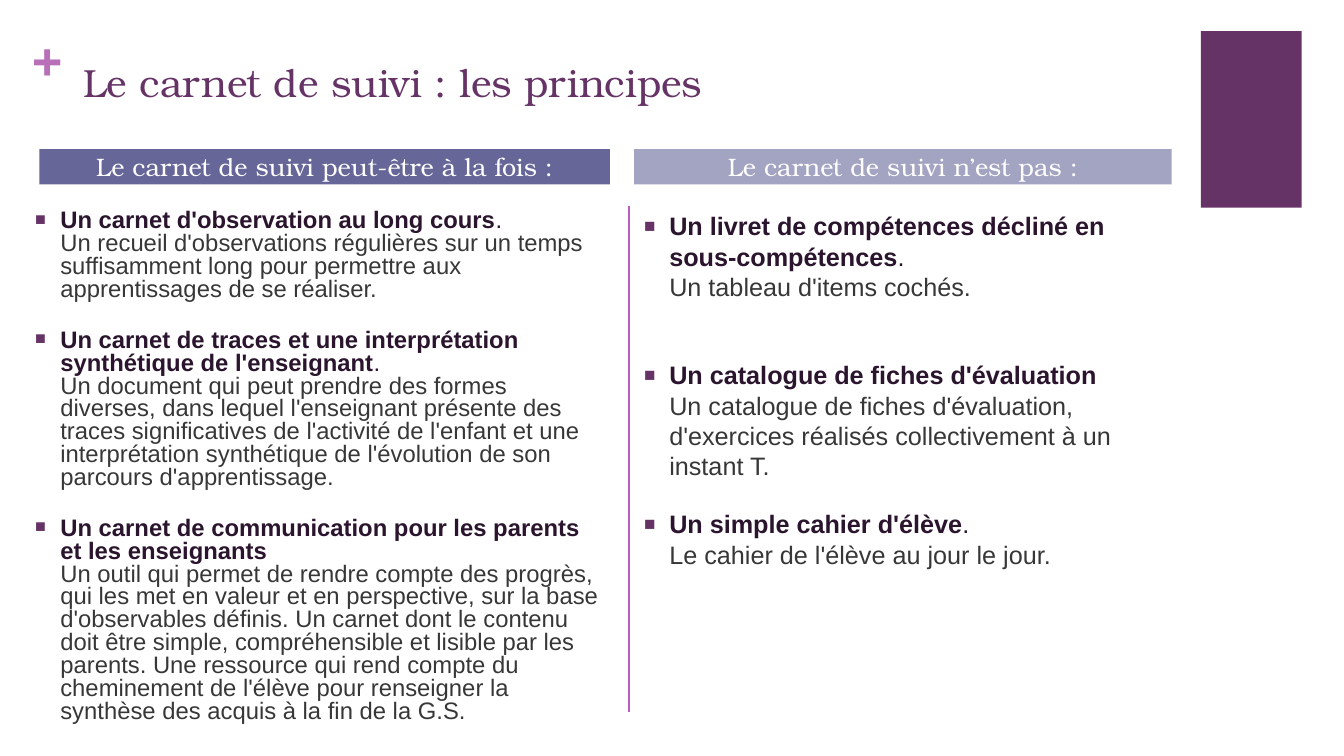
from pptx import Presentation
from pptx.dml.color import RGBColor
from pptx.enum.shapes import MSO_CONNECTOR, MSO_SHAPE
from pptx.enum.text import MSO_ANCHOR, PP_ALIGN
from pptx.oxml.ns import qn
from pptx.util import Inches, Pt
from lxml import etree

RECT, STRAIGHT = MSO_SHAPE.RECTANGLE, MSO_CONNECTOR.STRAIGHT
TOP, MIDDLE = MSO_ANCHOR.TOP, MSO_ANCHOR.MIDDLE
LEFT, CENTER = PP_ALIGN.LEFT, PP_ALIGN.CENTER

# Content
SERIF, SANS = "TeX Gyre Bonum", "Arial"
PURPLE, LILAC, RULE = "663366", "B870B8", "BC5FBC"
DARK, GREY, WHITE = "2B142D", "373737", "FFFFFF"
TITLE = "Le carnet de suivi : les principes"

# Each item: bold heading, mark after it, lines of explanation
IS_ITEMS = [
    ("Un carnet d'observation au long cours", ".",
     ["Un recueil d'observations régulières sur un temps suffisamment long "
      "pour permettre aux apprentissages de se réaliser."]),
    ("Un carnet de traces et une interprétation synthétique de l'enseignant", ".",
     ["Un document qui peut prendre des formes diverses, dans lequel "
      "l'enseignant présente des traces significatives de l'activité de "
      "l'enfant et une interprétation synthétique de l'évolution de son "
      "parcours d'apprentissage."]),
    ("Un carnet de communication pour les parents et les enseignants", "",
     ["Un outil qui permet de rendre compte des progrès, qui les met en valeur "
      "et en perspective, sur la base d'observables définis. Un carnet dont le "
      "contenu doit être simple, compréhensible et lisible par les parents. "
      "Une ressource qui rend compte du cheminement de l'élève pour renseigner "
      "la synthèse des acquis à la fin de la G.S."]),
]
IS_NOT_ITEMS = [
    ("Un livret de compétences décliné en sous-compétences", ".",
     ["Un tableau d'items cochés."]),
    ("Un catalogue de fiches d'évaluation", "",
     ["Un catalogue de fiches d'évaluation, d'exercices réalisés "
      "collectivement à un instant T."]),
    ("Un simple cahier d'élève", ".",
     ["Le cahier de l'élève au jour le jour."]),
]
# Header, fill, header (left, width), body (left, width, height),
# size, line spacing, space before each item, items
COLUMNS = [
    ("Le carnet de suivi peut-être à la fois :", "666699", (0.39, 5.66),
     (0.25, 5.81, 5.32), 17, 0.8, (20, 20, 20), IS_ITEMS),
    ("Le carnet de suivi n’est pas :", "A3A3C2", (6.29, 5.33),
     (6.29, 5.33, 5.02), 18, 1.0, (20, 41.7, 20), IS_NOT_ITEMS),
]
HEADER_TOP, HEADER_H, BODY_TOP, RULE_X, RULE_END = 1.48, 0.35, 2.04, 6.24, 7.06


def rgb(value):
    return RGBColor.from_string(value)


def add_rect(left, top, width, height, fill):
    sp = s.shapes.add_shape(RECT, *map(Inches, (left, top, width, height)))
    sp.shadow.inherit = False
    sp.fill.solid()
    sp.fill.fore_color.rgb = rgb(fill)
    sp.line.fill.background()
    return sp


def add_box(left, top, width, height):
    return s.shapes.add_textbox(*map(Inches, (left, top, width, height)))


def set_frame(sp, inset_x=0.1, inset_y=0.05, anchor=TOP):
    tf = sp.text_frame
    tf.word_wrap = True
    tf.vertical_anchor = anchor
    tf.margin_left = tf.margin_right = Inches(inset_x)
    tf.margin_top = tf.margin_bottom = Inches(inset_y)
    return tf


def set_font(p, name, size, color=None, bold=None):
    p.font.name, p.font.size, p.font.bold = name, Pt(size), bold
    if color:
        p.font.color.rgb = rgb(color)


def write_line(tf, text, size, color, bold=None, align=LEFT):
    p = tf.paragraphs[0]
    p.text, p.alignment = text, align
    set_font(p, SERIF, size, color, bold)


def add_run(p, text, color, bold=False):
    r = p.add_run()
    r.text, r.font.bold = text, bold
    r.font.color.rgb = rgb(color)


def set_bullet(p):
    pPr = p._p.get_or_add_pPr()
    pPr.set("marL", str(Inches(0.25)))
    pPr.set("indent", str(-Inches(0.25)))
    bullet = [etree.Element(qn(tag)) for tag in
              ("a:buClr", "a:buSzPct", "a:buFont", "a:buChar")]
    etree.SubElement(bullet[0], qn("a:srgbClr")).set("val", PURPLE)
    bullet[1].set("val", "75000")
    bullet[2].set("typeface", SANS)
    bullet[3].set("char", "■")
    defaults = pPr.find(qn("a:defRPr"))
    for element in bullet:
        defaults.addprevious(element)


prs = Presentation()
prs.slide_width, prs.slide_height = Inches(13.33), Inches(7.5)
s = prs.slides.add_slide(prs.slide_layouts[6])

# Corner block, plus sign and title
add_rect(11.91, 0.31, 1, 1.75, PURPLE)
write_line(set_frame(add_box(0.32, 0.25, 0.38, 0.61), 0, 0), "+", 36, LILAC, True)
write_line(set_frame(add_box(0.73, 0.53, 11.02, 1.22)), TITLE, 28, PURPLE)

# Two columns: header band and bulleted items
for header, fill, (x, w), (bx, bw, bh), size, spacing, gaps, items in COLUMNS:
    band = add_rect(x, HEADER_TOP, w, HEADER_H, fill)
    write_line(set_frame(band, 0.1, 0, MIDDLE), header, 18, WHITE, align=CENTER)
    tf = set_frame(add_box(bx, BODY_TOP, bw, bh))
    for i, (heading, mark, lines) in enumerate(items):
        p = tf.add_paragraph() if i else tf.paragraphs[0]
        p.line_spacing, p.space_before = spacing, Pt(gaps[i])
        set_font(p, SANS, size)
        set_bullet(p)
        add_run(p, heading, DARK, True)
        if mark:
            add_run(p, mark, DARK)
        for line in lines:
            p.add_line_break()
            add_run(p, line, GREY)

# Rule between the columns
rule = s.shapes.add_connector(STRAIGHT, Inches(RULE_X), Inches(BODY_TOP),
                              Inches(RULE_X), Inches(RULE_END))
rule.line.color.rgb = rgb(RULE)
rule.line.width = Pt(1.5)
etree.SubElement(rule._element.spPr, qn("a:effectLst"))

prs.save("out.pptx")
